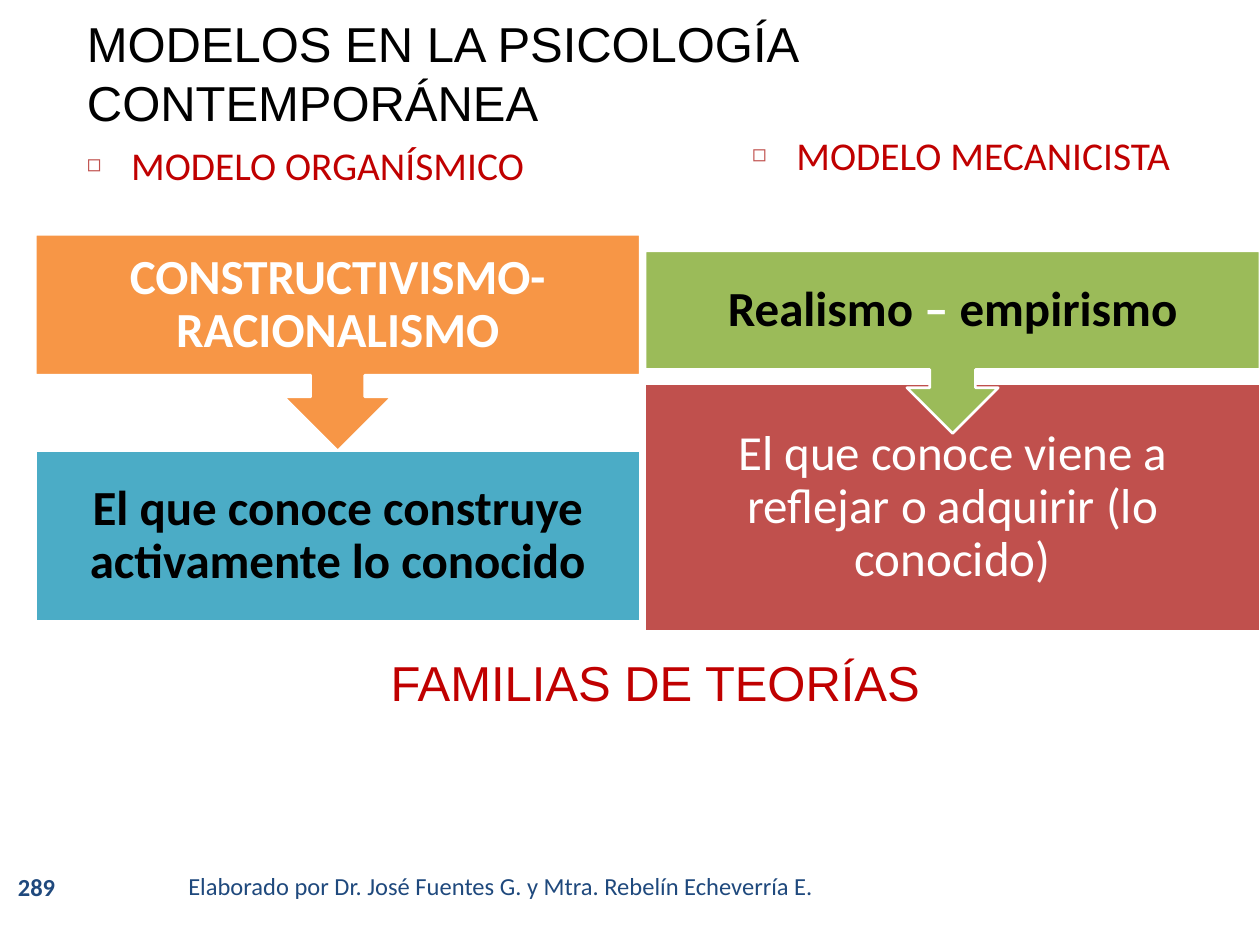
from dataclasses import dataclass
from lxml import etree
from pptx import Presentation
from pptx.dml.color import RGBColor
from pptx.enum.shapes import MSO_SHAPE
from pptx.enum.text import MSO_ANCHOR, MSO_AUTO_SIZE, PP_ALIGN
from pptx.oxml.ns import qn
from pptx.util import Inches, Pt

RECT, CALLOUT = MSO_SHAPE.RECTANGLE, MSO_SHAPE.UP_ARROW_CALLOUT
LEFT, CENTER, RIGHT = PP_ALIGN.LEFT, PP_ALIGN.CENTER, PP_ALIGN.RIGHT
TOP, MIDDLE = MSO_ANCHOR.TOP, MSO_ANCHOR.MIDDLE
NO_FIT = MSO_AUTO_SIZE.NONE
WIDTH, HEIGHT = Inches(10), Inches(7.5)
COLUMNS, ROWS = 100, 75


@dataclass(frozen=True)
class Theme:
    heading: str = "Arial"
    body: str = "Calibri"
    large: float = 28
    medium: float = 22.5
    small: float = 14
    black: str = "000000"
    white: str = "FFFFFF"
    crimson: str = "C00000"
    navy: str = "1F497D"
    orange: str = "F79646"
    teal: str = "4BACC6"
    green: str = "9BBB59"
    red: str = "C0504D"


THEME = Theme()


def place(sp, box):
    x, y, w, h = box
    sp.left, sp.width = int(WIDTH * x / COLUMNS), int(WIDTH * w / COLUMNS)
    sp.top, sp.height = int(HEIGHT * y / ROWS), int(HEIGHT * h / ROWS)


def style_runs(p, size, colors, font, bold=False):
    for r, color in zip(p.runs, colors):
        r.font.size, r.font.name, r.font.bold = Pt(size), font, bold
        r.font.color.rgb = RGBColor.from_string(color)


def write(sp, text, size, color, font=THEME.body, bold=False, align=LEFT, anchor=TOP):
    tf = sp.text_frame
    tf.text = text
    tf.word_wrap, tf.auto_size, tf.vertical_anchor = True, NO_FIT, anchor
    p = tf.paragraphs[0]
    p.alignment = align
    style_runs(p, size, [color], font, bold)
    return p


def add_label(s, box, *args, **kwargs):
    sp = s.shapes.add_textbox(0, 0, 0, 0)
    place(sp, box)
    return write(sp, *args, **kwargs)


def add_title(s, box):
    sp = s.shapes.title
    place(sp, box)
    write(sp, "MODELOS EN LA PSICOLOGÍA CONTEMPORÁNEA", THEME.large, THEME.black,
          THEME.heading, anchor=MIDDLE)


def add_model_name(sp, box, text):
    place(sp, box)
    p = write(sp, text, THEME.medium, THEME.crimson)
    p.space_before = Pt(7)
    pPr = p._p.get_or_add_pPr()
    pPr.set("marL", str(Inches(0.35)))
    pPr.set("indent", str(-Inches(0.35)))
    color = etree.SubElement(pPr, qn("a:buClr"))
    etree.SubElement(color, qn("a:srgbClr")).set("val", THEME.red)
    etree.SubElement(pPr, qn("a:buSzPct")).set("val", "60000")
    etree.SubElement(pPr, qn("a:buChar")).set("char", "◻")


def add_block(s, kind, box, color):
    sp = s.shapes.add_shape(kind, 0, 0, 0, 0)
    place(sp, box)
    sp.shadow.inherit = False
    sp.fill.solid()
    sp.fill.fore_color.rgb = RGBColor.from_string(color)
    sp.line.color.rgb = RGBColor.from_string(THEME.white)
    sp.line.width = Pt(1.5)
    return sp


def set_margins(tf):
    tf.margin_left = tf.margin_right = tf.margin_top = tf.margin_bottom = Inches(0.22)


def add_panel(s, box, arrow_share, base_share, arrow_color, base_color, claim, claim_color, claim_bold, parts):
    x, y, w, h = box
    base = add_block(s, RECT, (x, y + h * (1 - base_share), w, h * base_share), base_color)
    p = write(base, claim, THEME.large, claim_color, bold=claim_bold, align=CENTER, anchor=MIDDLE)
    p.line_spacing = 0.9
    set_margins(base.text_frame)

    arrow = add_block(s, CALLOUT, (x, y, w, h * arrow_share), arrow_color)
    arrow.rotation = 180
    sp = s.shapes.add_textbox(0, 0, 0, 0)
    place(sp, (x, y, w, h * arrow_share * 0.65))
    texts, colors = zip(*parts)
    p = write(sp, texts[0], THEME.large, colors[0], align=CENTER, anchor=MIDDLE)
    for text in texts[1:]:
        p.add_run().text = text
    style_runs(p, THEME.large, colors, THEME.body, True)
    p.line_spacing = 0.9
    set_margins(sp.text_frame)


def add_footer(s, y):
    add_label(s, (0, y, 5.8, 4.2), "289", THEME.small, THEME.navy, bold=True,
              align=CENTER, anchor=MIDDLE)
    add_label(s, (6.7, y, 59.3, 4), "Elaborado por Dr. José Fuentes G. y Mtra. Rebelín Echeverría E. ",
              THEME.small, THEME.navy, align=RIGHT, anchor=MIDDLE)


def main():
    prs = Presentation()
    prs.slide_width, prs.slide_height = WIDTH, HEIGHT
    s = prs.slides.add_slide(prs.slide_layouts[3])
    add_title(s, (5.9, 0, 84.8, 11.5))
    add_model_name(s.placeholders[1], (5.9, 10.7, 37.7, 7.2), "MODELO ORGANÍSMICO")
    add_model_name(s.placeholders[2], (58.7, 9.9, 37.7, 7.2), "MODELO MECANICISTA")
    add_panel(s, (2.8, 18.6, 48, 30.7), 0.56, 0.44, THEME.orange, THEME.teal,
              "El que conoce construye activamente lo conocido", THEME.black, True,
              [("CONSTRUCTIVISMO-RACIONALISMO", THEME.white)])
    add_panel(s, (51.2, 19.9, 48.8, 30.2), 0.48, 0.65, THEME.green, THEME.red,
              "El que conoce viene a reflejar o adquirir (lo conocido)", THEME.white, False,
              [("Realismo", THEME.black), (" – ", THEME.white), ("empirismo", THEME.black)])
    add_label(s, (19.3, 51.3, 65.4, 5.7), "FAMILIAS DE TEORÍAS", THEME.large, THEME.crimson,
              THEME.heading, align=CENTER)
    add_footer(s, 68.3)
    prs.save("out.pptx")


if __name__ == "__main__":
    main()
